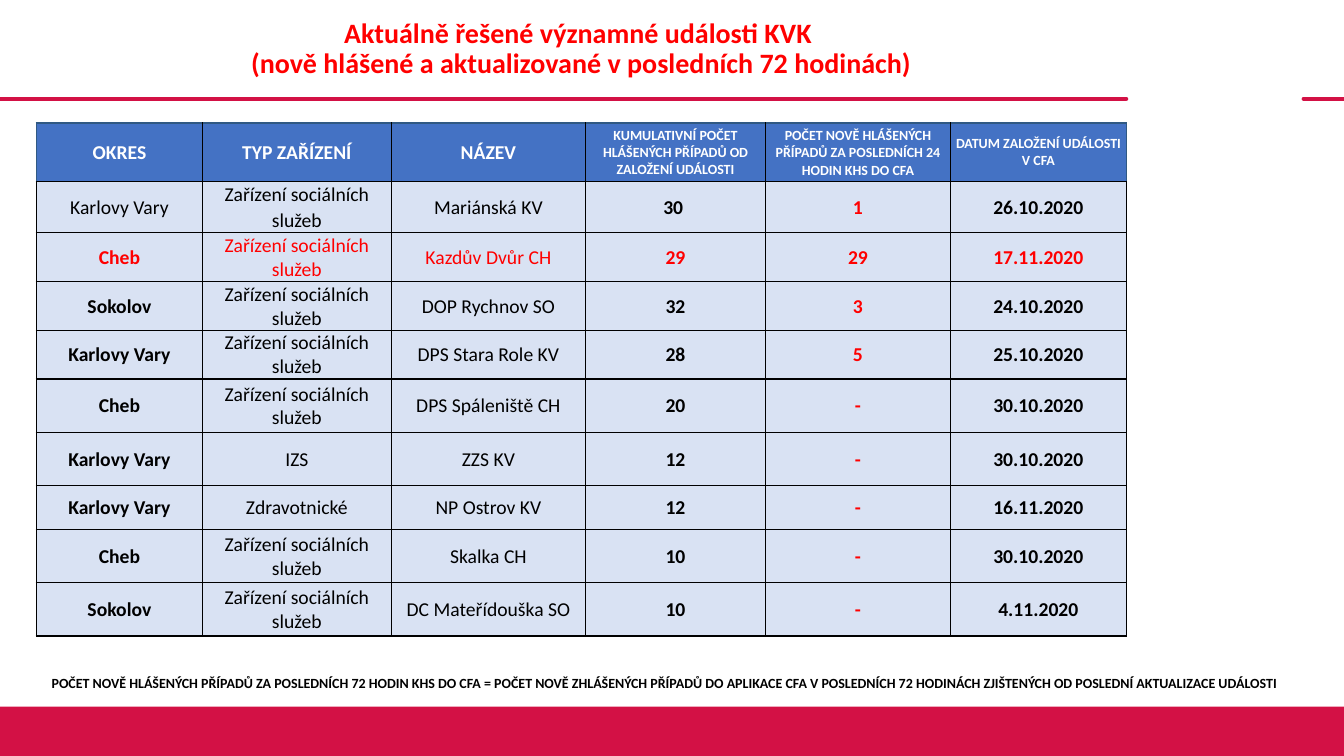
from lxml.etree import SubElement
from pptx import Presentation
from pptx.dml.color import RGBColor
from pptx.enum.shapes import MSO_CONNECTOR as Connector, MSO_SHAPE as Shape
from pptx.enum.text import MSO_ANCHOR as Anchor, PP_ALIGN as Align
from pptx.oxml.ns import qn
from pptx.util import Inches, Pt

CRIMSON = RGBColor(0xD3, 0x11, 0x45)
RED = RGBColor(0xFF, 0, 0)
BLACK = RGBColor(0, 0, 0)
WHITE = RGBColor(0xFF, 0xFF, 0xFF)
HEADER_BLUE = RGBColor(0x44, 0x72, 0xC4)
HEADER_EDGE = RGBColor(0x30, 0x59, 0x83)
PALE_BLUE = RGBColor(0xD9, 0xE2, 0xF3)

FONT = "Calibri"
LEFT, WIDTH = 0.36, 10.81
SLIDE_WIDTH, SLIDE_HEIGHT = 13.33, 7.5
RULE_TOP, BAND_TOP = 0.98, 7.01
COLUMN_WIDTHS = [1.65, 1.87, 1.93, 1.78, 1.84, 1.74]
ROW_HEIGHTS = [0.58, 0.51, 0.48, 0.48, 0.48, 0.53, 0.53, 0.43, 0.53, 0.53]

TITLE = ("Aktuálně řešené významné události KVK \v"
         "(nově hlášené a aktualizované v posledních 72 hodinách)")
FOOTNOTE = ("POČET NOVĚ HLÁŠENÝCH PŘÍPADŮ ZA POSLEDNÍCH 72 HODIN KHS DO CFA = "
            "POČET NOVĚ ZHLÁŠENÝCH PŘÍPADŮ DO APLIKACE CFA V POSLEDNÍCH 72 HODINÁCH "
            "ZJIŠTENÝCH OD POSLEDNÍ AKTUALIZACE UDÁLOSTI")
HEADERS = [
    "OKRES", "TYP ZAŘÍZENÍ", "NÁZEV",
    "KUMULATIVNÍ POČET HLÁŠENÝCH PŘÍPADŮ OD ZALOŽENÍ UDÁLOSTI",
    "POČET NOVĚ HLÁŠENÝCH PŘÍPADŮ ZA POSLEDNÍCH 24 HODIN KHS DO CFA",
    "DATUM ZALOŽENÍ UDÁLOSTI V CFA",
]
SOCIAL = "Zařízení sociálních služeb"
EVENTS = [
    ("Karlovy Vary", SOCIAL, "Mariánská KV", "30 ", "1", "26.10.2020"),
    ("Cheb", SOCIAL, "Kazdův Dvůr CH", "29", "29", "17.11.2020"),
    ("Sokolov", SOCIAL, "DOP Rychnov SO", "32", "3", "24.10.2020"),
    ("Karlovy Vary", SOCIAL, "DPS Stara Role KV", "28", "5", "25.10.2020"),
    ("Cheb", SOCIAL, "DPS Spáleniště CH", "20", "-", "30.10.2020"),
    ("Karlovy Vary", "IZS", "ZZS KV", "12", "-", "30.10.2020"),
    ("Karlovy Vary", "Zdravotnické", "NP Ostrov KV", "12", "-", "16.11.2020"),
    ("Cheb", SOCIAL, "Skalka CH", "10", "-", "30.10.2020"),
    ("Sokolov", SOCIAL, "DC Mateřídouška SO", "10", "-", "4.11.2020"),
]
NEW_CASES_COLUMN = 4
HIGHLIGHTED_EVENT = 2


def format_text(frame, size, color, bold=True, spacing=1.0):
    for paragraph in frame.paragraphs:
        paragraph.alignment = Align.CENTER
        paragraph.line_spacing = spacing
        font = paragraph.font
        font.name, font.size, font.bold = FONT, Pt(size), bold
        font.color.rgb = color


def add_rule(slide, start, end):
    rule = slide.shapes.add_connector(Connector.STRAIGHT, Inches(start), Inches(RULE_TOP),
                                      Inches(end), Inches(RULE_TOP))
    rule.line.color.rgb = CRIMSON
    rule.line.width = Pt(3)
    rule.line._get_or_add_ln().set("cap", "rnd")
    SubElement(rule._element.spPr, qn("a:effectLst"))


def add_band(slide):
    band = slide.shapes.add_shape(Shape.RECTANGLE, 0, Inches(BAND_TOP), Inches(SLIDE_WIDTH),
                                  Inches(SLIDE_HEIGHT - BAND_TOP))
    band.shadow.inherit = False
    band.fill.solid()
    band.fill.fore_color.rgb = CRIMSON
    band.line.fill.background()


def set_title(slide):
    title = slide.shapes.title
    title.left, title.top = Inches(LEFT), 0
    title.width, title.height = Inches(WIDTH), Inches(RULE_TOP)
    title.text_frame.text = TITLE
    title.text_frame.vertical_anchor = Anchor.MIDDLE
    format_text(title.text_frame, 20, RED, spacing=0.9)


def add_footnote(slide):
    box = slide.shapes.add_textbox(0, Inches(6.63), Inches(13.17), Inches(0.27))
    box.text_frame.word_wrap = True
    box.text_frame.text = FOOTNOTE
    format_text(box.text_frame, 10, BLACK, spacing=1.05)


def set_borders(cell, edges):
    properties = cell._tc.get_or_add_tcPr()
    for position, (edge, color) in enumerate(edges.items()):
        line = SubElement(properties, qn(f"a:{edge}"), w=str(Pt(1)))
        fill = SubElement(line, qn("a:solidFill"))
        SubElement(fill, qn("a:srgbClr"), val=str(color))
        properties.remove(line)
        properties.insert(position, line)


def style_cell(cell, row, column):
    header = row == 0
    cell.vertical_anchor = Anchor.MIDDLE
    side, top = (0.07, 0) if row == 1 else (0.01, 0.01)
    cell.margin_left = cell.margin_right = Inches(side)
    cell.margin_top, cell.margin_bottom = Inches(top), 0
    cell.fill.solid()
    cell.fill.fore_color.rgb = HEADER_BLUE if header else PALE_BLUE
    edges = dict.fromkeys(("lnL", "lnR", "lnT", "lnB"), BLACK)
    if header:
        edges["lnT"] = HEADER_EDGE
        if column == 0:
            edges["lnL"] = HEADER_EDGE
        if column == len(HEADERS) - 1:
            edges["lnR"] = HEADER_EDGE
        spacing = 1.05 if column == NEW_CASES_COLUMN else 1.0
        format_text(cell.text_frame, 14 if column < 3 else 10, WHITE, spacing=spacing)
    else:
        red = column == NEW_CASES_COLUMN or row == HIGHLIGHTED_EVENT
        bold = column > 2 or (column == 0 and row > 1)
        format_text(cell.text_frame, 14, RED if red else BLACK, bold,
                    1.07 if row == 1 else 1.0)
    set_borders(cell, edges)


def add_events_table(slide):
    rows = [HEADERS, *EVENTS]
    table = slide.shapes.add_table(len(rows), len(HEADERS), Inches(LEFT), Inches(1.22),
                                   Inches(WIDTH), Inches(sum(ROW_HEIGHTS))).table
    table.horz_banding = False
    for column, width in zip(table.columns, COLUMN_WIDTHS):
        column.width = Inches(width)
    for row, height in zip(table.rows, ROW_HEIGHTS):
        row.height = Inches(height)
    for row, values in enumerate(rows):
        for column, value in enumerate(values):
            cell = table.cell(row, column)
            cell.text = value
            style_cell(cell, row, column)


def main():
    presentation = Presentation()
    presentation.slide_width = Inches(SLIDE_WIDTH)
    presentation.slide_height = Inches(SLIDE_HEIGHT)
    slide = presentation.slides.add_slide(presentation.slide_layouts[5])
    add_rule(slide, 0, LEFT + WIDTH)
    add_rule(slide, 12.93, SLIDE_WIDTH)
    add_band(slide)
    add_events_table(slide)
    set_title(slide)
    add_footnote(slide)
    presentation.save("out.pptx")


if __name__ == "__main__":
    main()
